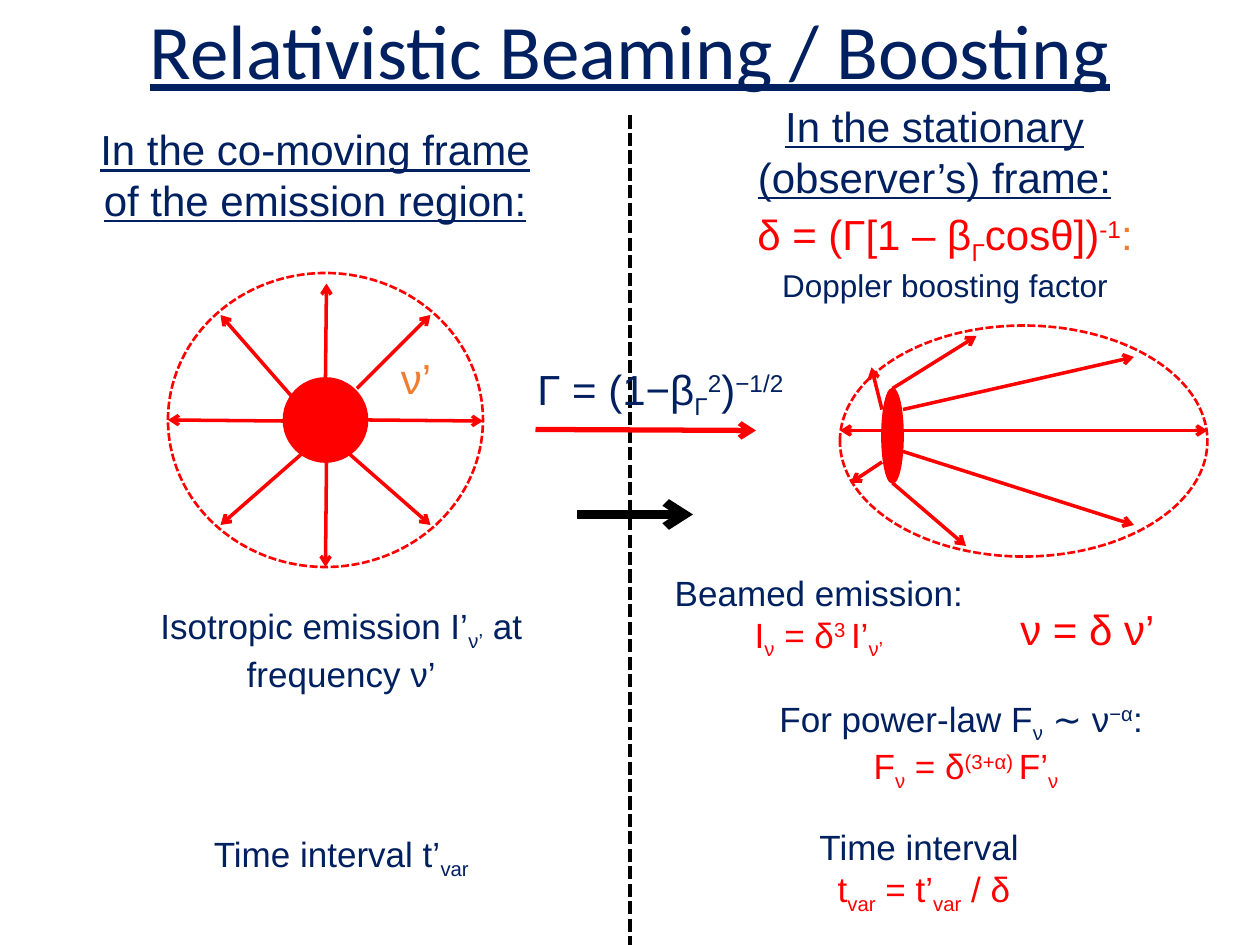
import pptx
import pptx.dml.color
import pptx.enum.dml
import pptx.enum.shapes
import pptx.enum.text
import pptx.oxml.ns
import pptx.util
from lxml import etree

EMU_PER_PX = 7620  # 120 px to the inch
NAVY = pptx.dml.color.RGBColor(0x00, 0x20, 0x60)
RED = pptx.dml.color.RGBColor(0xFF, 0x00, 0x00)
ORANGE = pptx.dml.color.RGBColor(0xED, 0x7D, 0x31)
BLACK = pptx.dml.color.RGBColor(0x00, 0x00, 0x00)

DASH = pptx.enum.dml.MSO_LINE.SQUARE_DOT
CENTER = pptx.enum.text.PP_ALIGN.CENTER
LEFT = pptx.enum.text.PP_ALIGN.LEFT

TITLE = {"name": "Calibri", "size": 44, "color": NAVY, "underline": True}
BODY = {"name": "Arial", "size": 20, "color": NAVY}
FORMULA = BODY | {"size": 24}
HEADING = FORMULA | {"underline": True}
RESULT = {"color": RED}
SUB = {"baseline": -25000}
SUP = {"baseline": 30000}


def px(*lengths):
    return [pptx.util.Emu(length * EMU_PER_PX) for length in lengths]


def inside(box, x, y):
    """Move a point given relative to box onto the page."""
    return box[0] + x, box[1] + y


def format_span(span, values):
    for name, value in values.items():
        if name == "color":
            span.font.color.rgb = value
        elif name == "baseline":
            span._r.get_or_add_rPr().set("baseline", str(value))
        else:
            setattr(span.font, name, pptx.util.Pt(value) if name == "size" else value)


def add_text(page, box, area, base, *paras, align=CENTER):
    """Write paragraphs, each a list of (text, format, ...) spans, over a base format."""
    x, y, width, height = area
    frame = page.shapes.add_textbox(*px(*inside(box, x, y), width, height)).text_frame
    frame.word_wrap = True
    for index, spans in enumerate(paras):
        para = frame.paragraphs[0] if index == 0 else frame.add_paragraph()
        para.alignment = align
        for text, *changes in spans:
            span = para.add_run()
            span.text = text
            values = dict(base)
            for change in changes:
                values |= change
            format_span(span, values)
    return frame


def add_ellipse(page, box, area, filled):
    """Draw a solid emitter, or a dashed emission envelope."""
    x, y, width, height = area
    oval = pptx.enum.shapes.MSO_SHAPE.OVAL
    shape = page.shapes.add_shape(oval, *px(*inside(box, x, y), width, height))
    shape.shadow.inherit = False
    shape.line.color.rgb = RED
    if filled:
        shape.fill.solid()
        shape.fill.fore_color.rgb = RED
        shape.line.width = pptx.util.Pt(1)
    else:
        shape.fill.background()
        shape.line.width = pptx.util.Pt(1.5)
        shape.line.dash_style = DASH


def add_line(page, box, ends, color=RED, weight=2, arrow=True):
    """Draw a solid arrow, or a dashed line when arrow is False."""
    straight = pptx.enum.shapes.MSO_CONNECTOR.STRAIGHT
    points = px(*inside(box, *ends[:2]), *inside(box, *ends[2:]))
    connector = page.shapes.add_connector(straight, *points)
    connector.line.color.rgb = color
    connector.line.width = pptx.util.Pt(weight)
    if arrow:
        outline = connector.line._get_or_add_ln()
        etree.SubElement(outline, pptx.oxml.ns.qn("a:tailEnd"), type="arrow")
    else:
        connector.line.dash_style = DASH
    etree.SubElement(connector._element.spPr, pptx.oxml.ns.qn("a:effectLst"))


def add_emission(page, box, emitter, rays, envelope):
    add_ellipse(page, box, emitter, filled=True)
    for ray in rays:
        add_line(page, box, ray)
    add_ellipse(page, box, envelope, filled=False)


def add_title(page, box):
    frame = add_text(page, box, (0, 0, *box[2:]), TITLE,
                     [("Relativistic Beaming / Boosting",)])
    frame.vertical_anchor = pptx.enum.text.MSO_ANCHOR.MIDDLE
    frame.paragraphs[0].line_spacing = 0.9


def add_co_moving_frame(page, box):
    add_text(page, box, (70, 22, 460, 109), HEADING,
             [("In the co-moving frame of the emission region:",)])
    rays = [
        (310, 270, 311, 180), (340, 280, 410, 210),
        (330, 340, 410, 410), (350, 310, 460, 311),
        (290, 340, 210, 410), (280, 290, 210, 210),
        (311, 350, 310, 450), (270, 311, 160, 310),
    ]
    add_emission(page, box, (270, 270, 80, 80), rays, (160, 170, 300, 280))
    add_text(page, box, (370, 240, 60, 61), FORMULA,
             [("ν’", {"color": ORANGE})], align=LEFT)
    add_text(page, box, (130, 480, 390, 92), BODY,
             [("Isotropic emission I’",), ("ν’", SUB), (" at frequency ν’",)])
    add_text(page, box, (130, 697, 390, 53), BODY,
             [("Time interval t’",), ("var", SUB)])


def add_frame_change(page, box):
    """Draw the divider with the Lorentz factor and arrows that cross it."""
    add_line(page, box, (100, 0, 100, box[3]), BLACK, 2.5, arrow=False)
    add_text(page, box, (0, 230, 270, 61), FORMULA,
             [("Γ = (1−β",), ("Γ", SUB), ("2", SUP), (")",), ("−1/2", SUP)],
             align=LEFT)
    add_line(page, box, (10, 299, 220, 300), RED, 3)
    add_line(page, box, (50, 380, 160, 380), BLACK, 5)


def add_stationary_frame(page, box):
    add_text(page, box, (60, 0, 460, 109), HEADING,
             [("In the stationary (observer’s) frame:",)])
    add_text(page, box, (90, 103, 420, 97), FORMULA | RESULT,
             [("δ = (Γ[1 – β",), ("Γ", SUB), ("cosθ])",), ("-1", SUP),
              (": ", {"color": ORANGE}),
              ("Doppler boosting factor", {"size": 18, "color": NAVY})])
    rays = [
        (260, 300, 480, 250), (240, 320, 200, 320),
        (240, 350, 210, 370), (240, 300, 230, 260),
        (250, 370, 320, 430), (250, 280, 330, 230),
        (260, 340, 480, 410), (260, 320, 550, 320),
    ]
    add_emission(page, box, (240, 280, 20, 90), rays, (200, 220, 350, 220))
    add_text(page, box, (360, 479, 170, 61), FORMULA | RESULT,
             [("ν = δ ν’",)], align=LEFT)
    add_text(page, box, (20, 448, 320, 92), BODY,
             [("Beamed emission:",)],
             [("I", RESULT), ("ν", RESULT, SUB), (" = δ", RESULT),
              ("3 ", RESULT, SUP), ("I’", RESULT), ("ν’", RESULT, SUB)])
    add_text(page, box, (130, 568, 380, 92), BODY,
             [("For power-law F",), ("ν", SUB), (" ∼ ν",), ("−α", SUP), (": ",)],
             [("F", RESULT), ("ν", RESULT, SUB), (" = δ", RESULT),
              ("(3+α) ", RESULT, SUP), ("F’", RESULT), ("ν", RESULT, SUB)])
    add_text(page, box, (70, 690, 420, 92), BODY,
             [("Time interval ",)],
             [("t", RESULT), ("var", RESULT, SUB), (" = t’", RESULT),
              ("var", RESULT, SUB), (" / δ", RESULT)])


def main():
    deck = pptx.Presentation()
    deck.slide_width, deck.slide_height = px(1200, 900)
    page = deck.slides.add_slide(deck.slide_layouts[6])
    add_title(page, (60, 0, 1080, 104))
    add_co_moving_frame(page, (0, 90, 600, 810))
    add_frame_change(page, (500, 110, 270, 790))
    add_stationary_frame(page, (600, 90, 600, 810))
    deck.save("out.pptx")


if __name__ == "__main__":
    main()
